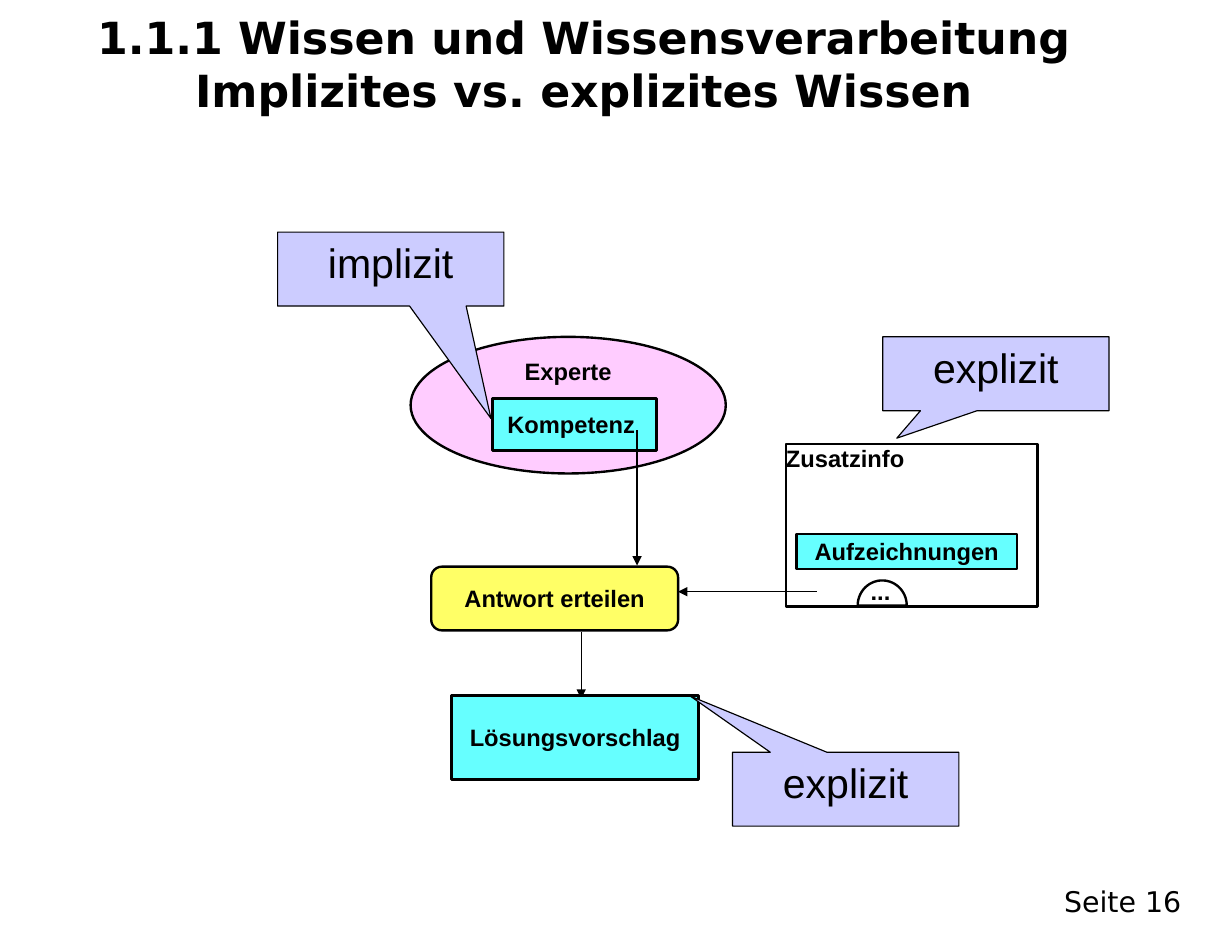
"""Build the slide on implicit and explicit knowledge."""
from dataclasses import dataclass
from math import cos, pi, sin

from lxml import etree
from pptx import Presentation
from pptx.dml.color import RGBColor
from pptx.enum.shapes import MSO_CONNECTOR, MSO_SHAPE
from pptx.enum.text import MSO_ANCHOR, PP_ALIGN
from pptx.oxml.ns import qn
from pptx.util import Inches, Pt

RECT, ROUNDED = MSO_SHAPE.RECTANGLE, MSO_SHAPE.ROUNDED_RECTANGLE
OVAL, CALLOUT = MSO_SHAPE.OVAL, MSO_SHAPE.RECTANGULAR_CALLOUT
STRAIGHT = MSO_CONNECTOR.STRAIGHT
TOP, MIDDLE = MSO_ANCHOR.TOP, MSO_ANCHOR.MIDDLE
LEFT, CENTER = PP_ALIGN.LEFT, PP_ALIGN.CENTER


@dataclass(frozen=True)
class Theme:
    ink: str = "000000"
    paper: str = "FFFFFF"
    person: str = "FFCCFF"
    task: str = "FFFF66"
    knowledge: str = "66FFFF"
    remark: str = "CCCCFF"
    thin: float = 0.75
    thick: float = 1.5
    heading_font: str = "DejaVu Sans"
    body_font: str = "Arial"
    title_size: int = 28
    remark_size: int = 26
    page_size: int = 18
    label_size: int = 15


THEME = Theme()
SLIDE_WIDTH, SLIDE_HEIGHT = Inches(10.83), Inches(8.33)
COLUMN, ROW = SLIDE_WIDTH / 100, SLIDE_HEIGHT / 100

LABEL = {"size": THEME.label_size, "font": THEME.body_font, "bold": True,
         "align": CENTER, "anchor": MIDDLE, "insets": (0, 0, 0, 0), "wrap": False}
TOP_LABEL = LABEL | {"anchor": TOP, "wrap": True}
REMARK = {"size": THEME.remark_size, "font": THEME.body_font, "bold": False,
          "align": CENTER, "anchor": TOP, "insets": (0.11, 0.05, 0.11, 0.05), "wrap": True}
TITLE = {"size": THEME.title_size, "font": THEME.heading_font, "bold": True,
         "align": CENTER, "anchor": MIDDLE, "insets": (0, 0.05, 0.1, 0.05), "wrap": True}
PAGE = TITLE | {"size": THEME.page_size, "bold": False, "anchor": TOP,
                "insets": (0.1, 0.05, 0.1, 0.05)}

ANSWER = ("Antwort erteilen", ROUNDED, (35, 59.78, 20.04, 6.72), THEME.task, LABEL)
NODES = [
    ("Experte", OVAL, (33.33, 35.53, 25.58, 14.41), THEME.person, TOP_LABEL),
    ("Kompetenz ", RECT, (39.98, 42.02, 13.3, 5.52), THEME.knowledge, LABEL),
    ("Zusatzinfo", RECT, (63.8, 46.82, 20.41, 17.17), THEME.paper, TOP_LABEL | {"align": LEFT}),
    ("Lösungsvorschlag", RECT, (36.66, 73.35, 20.04, 8.88), THEME.knowledge, LABEL),
    ("Aufzeichnungen", RECT, (64.64, 56.3, 17.91, 3.72), THEME.knowledge, LABEL),
]
ANSWER_TO_SOLUTION = ((47.18, 66.63), (47.18, 73.71), THEME.thin)
INPUT_ARROWS = [
    ((51.71, 45.38), (51.71, 59.66), THEME.thick),
    ((66.3, 62.42), (55.03, 62.42), THEME.thin),
]
MORE_CENTER, MORE_RADII = (71.61, 63.87), (1.99, 2.64)
REMARK_SIZE = (18.37, 7.8)
REMARKS = [
    ("explizit", (71.65, 35.53), (-0.438, 0.872)),
    ("explizit", (59.46, 79.35), (-0.687, -1.259)),
    ("implizit", (22.53, 24.49), (0.443, 2.021)),
]
TEXTS = [
    ("...", (70.64, 60.74, 1.66, 3.12), LABEL),
    ("Seite 16", (84.21, 92.68, 13.85, 2.04), PAGE),
    ("1.1.1 Wissen und Wissensverarbeitung\vImplizites vs. explizites Wissen",
     (4.89, 3.72, 85.87, 6), TITLE),
]


def place(x, y):
    return round(x * COLUMN), round(y * ROW)


def frame(box):
    return place(*box[:2]) + place(*box[2:])


def set_all(target, values):
    for name, value in values.items():
        setattr(target, name, value)


def write(shape, text, style):
    text_frame = shape.text_frame
    text_frame.text = text
    margins = ("margin_left", "margin_top", "margin_right", "margin_bottom")
    set_all(text_frame, dict(zip(margins, map(Inches, style["insets"]))))
    set_all(text_frame, {"word_wrap": style["wrap"], "vertical_anchor": style["anchor"]})
    paragraph = text_frame.paragraphs[0]
    paragraph.alignment = style["align"]
    for run in paragraph.runs:
        set_all(run.font, {"name": style["font"], "size": Pt(style["size"]), "bold": style["bold"]})
        run.font.color.rgb = RGBColor.from_string(THEME.ink)


def outline(shape, weight):
    shape.line.color.rgb = RGBColor.from_string(THEME.ink)
    shape.line.width = Pt(weight)


def paint(shape, fill, weight):
    shape.shadow.inherit = False
    shape.fill.solid()
    shape.fill.fore_color.rgb = RGBColor.from_string(fill)
    outline(shape, weight)


def add_node(shapes, text, kind, box, fill, style, weight=THEME.thick):
    node = shapes.add_shape(kind, *frame(box))
    paint(node, fill, weight)
    write(node, text, style)
    return node


def add_arrow(shapes, start, end, weight):
    arrow = shapes.add_connector(STRAIGHT, *place(*start), *place(*end))
    outline(arrow, weight)
    etree.SubElement(arrow.line._get_or_add_ln(), qn("a:tailEnd"), type="triangle")
    etree.SubElement(arrow._element.spPr, qn("a:effectLst"))


def add_half_disc(shapes, center, radii, steps=48):
    angles = [pi * step / steps for step in range(steps + 1)]
    rim = [place(center[0] + radii[0] * cos(angle), center[1] - radii[1] * sin(angle))
           for angle in angles]
    builder = shapes.build_freeform(*rim[0])
    builder.add_line_segments(rim[1:], close=True)
    paint(builder.convert_to_shape(), THEME.paper, THEME.thick)


def main():
    deck = Presentation()
    set_all(deck, {"slide_width": SLIDE_WIDTH, "slide_height": SLIDE_HEIGHT})
    shapes = deck.slides.add_slide(deck.slide_layouts[6]).shapes

    add_node(shapes, *ANSWER)
    add_arrow(shapes, *ANSWER_TO_SOLUTION)
    for node in NODES:
        add_node(shapes, *node)
    add_half_disc(shapes, MORE_CENTER, MORE_RADII)
    for arrow in INPUT_ARROWS:
        add_arrow(shapes, *arrow)
    for text, corner, pointer in REMARKS:
        remark = add_node(shapes, text, CALLOUT, corner + REMARK_SIZE,
                          THEME.remark, REMARK, THEME.thin)
        for index, share in enumerate(pointer):
            remark.adjustments[index] = share
    for text, box, style in TEXTS:
        write(shapes.add_textbox(*frame(box)), text, style)

    deck.save("out.pptx")


if __name__ == "__main__":
    main()
